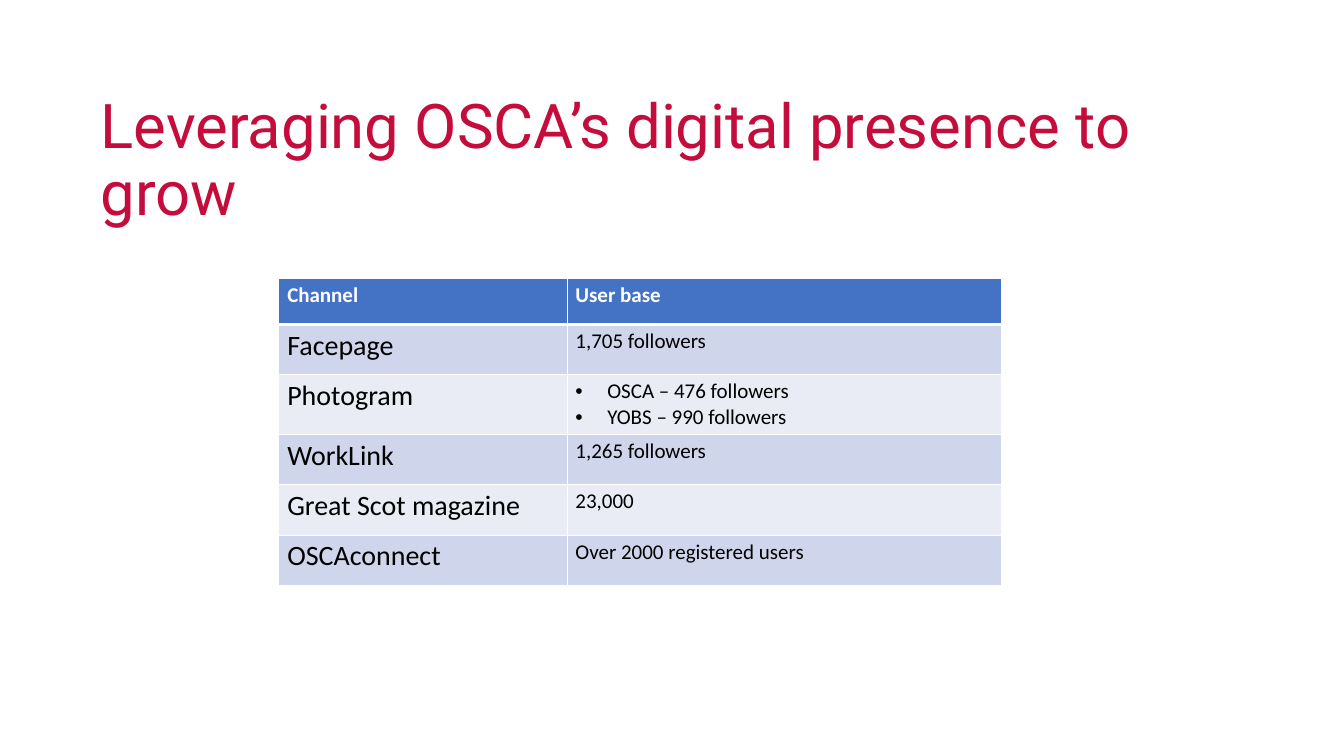
from lxml import etree
from pptx import Presentation
from pptx import util as u
from pptx.dml.color import RGBColor
from pptx.enum import text
from pptx.oxml.ns import qn

COLOURS = {
    "title": "C40D3C",
    "header": "4472C4",
    "band_dark": "CFD5EA",
    "band_light": "E9EBF5",
    "white": "FFFFFF",
    "black": "000000",
}

CHANNELS = [
    ("Channel", ["User base"]),
    ("Facepage", ["1,705 followers"]),
    ("Photogram", ["OSCA – 476 followers", "YOBS – 990 followers"]),
    ("WorkLink", ["1,265 followers"]),
    ("Great Scot magazine", ["23,000"]),
    ("OSCAconnect", ["Over 2000 registered users"]),
]


class SlideBuilder:
    def __init__(self, presentation):
        self.body_font = "Calibri"
        self.title_font = "Roboto"
        self.slide = presentation.slides.add_slide(presentation.slide_layouts[5])

    def colour(self, name):
        return RGBColor.from_string(COLOURS[name])

    def run(self, paragraph, words, size, colour, font, bold=False):
        run = paragraph.add_run()
        run.text = words
        run.font.name = font
        run.font.size = u.Pt(size)
        run.font.bold = bold
        run.font.color.rgb = self.colour(colour)

    def title(self, words, left, top, width, height):
        title = self.slide.shapes.title
        title.left, title.top = u.Inches(left), u.Inches(top)
        title.width, title.height = u.Inches(width), u.Inches(height)
        frame = title.text_frame
        frame.word_wrap = True
        frame.auto_size = text.MSO_AUTO_SIZE.NONE
        frame.vertical_anchor = text.MSO_ANCHOR.MIDDLE
        paragraph = frame.paragraphs[0]
        paragraph.alignment = text.PP_ALIGN.LEFT
        paragraph.line_spacing = 0.9
        self.run(paragraph, words, 52.8, "title", self.title_font)

    def bullet(self, paragraph):
        properties = paragraph._p.get_or_add_pPr()
        properties.set("marL", str(u.Inches(0.38)))
        properties.set("indent", str(u.Inches(-0.38)))
        etree.SubElement(properties, qn("a:buFont"), typeface="Arial")
        etree.SubElement(properties, qn("a:buChar"), char="•")

    def borders(self, cell, top, bottom):
        """Draw white cell edges; top and bottom are widths in points."""
        properties = cell._tc.get_or_add_tcPr()
        widths = {"a:lnL": 1, "a:lnR": 1, "a:lnT": top, "a:lnB": bottom}
        for position, (tag, width) in enumerate(widths.items()):
            line = etree.Element(qn(tag), w=str(u.Pt(width)))
            fill = etree.SubElement(line, qn("a:solidFill"))
            etree.SubElement(fill, qn("a:srgbClr"), val=COLOURS["white"])
            properties.insert(position, line)

    def cell(self, cell, lines, row, size):
        header = row == 0
        fill = "header" if header else "band_dark" if row % 2 else "band_light"
        cell.fill.solid()
        cell.fill.fore_color.rgb = self.colour(fill)
        self.borders(cell, 3 if row == 1 else 1, 3 if header else 1)
        frame = cell.text_frame
        for index, words in enumerate(lines):
            paragraph = frame.add_paragraph() if index else frame.paragraphs[0]
            if len(lines) > 1:
                self.bullet(paragraph)
            self.run(paragraph, words, size, "white" if header else "black",
                     self.body_font, bold=header)

    def table(self, rows, left, top, column_widths, row_heights):
        table = self.slide.shapes.add_table(
            len(rows), len(column_widths), u.Inches(left), u.Inches(top),
            u.Inches(sum(column_widths)), u.Inches(sum(row_heights))).table
        for column, width in zip(table.columns, column_widths):
            column.width = u.Inches(width)
        for index, (channel, users) in enumerate(rows):
            table.rows[index].height = u.Inches(row_heights[index])
            self.cell(table.cell(index, 0), [channel], index, 24 if index else 18)
            self.cell(table.cell(index, 1), users, index, 18)


def main():
    presentation = Presentation()
    presentation.slide_width = u.Inches(16)
    presentation.slide_height = u.Inches(9)
    builder = SlideBuilder(presentation)
    builder.title("Leveraging OSCA’s digital presence to grow", 1.1, 1.06, 13.8, 1.74)
    builder.table(CHANNELS, 3.32, 3.31, [3.43, 5.17], [0.55] + [0.6] * 5)
    presentation.save("out.pptx")


if __name__ == "__main__":
    main()
